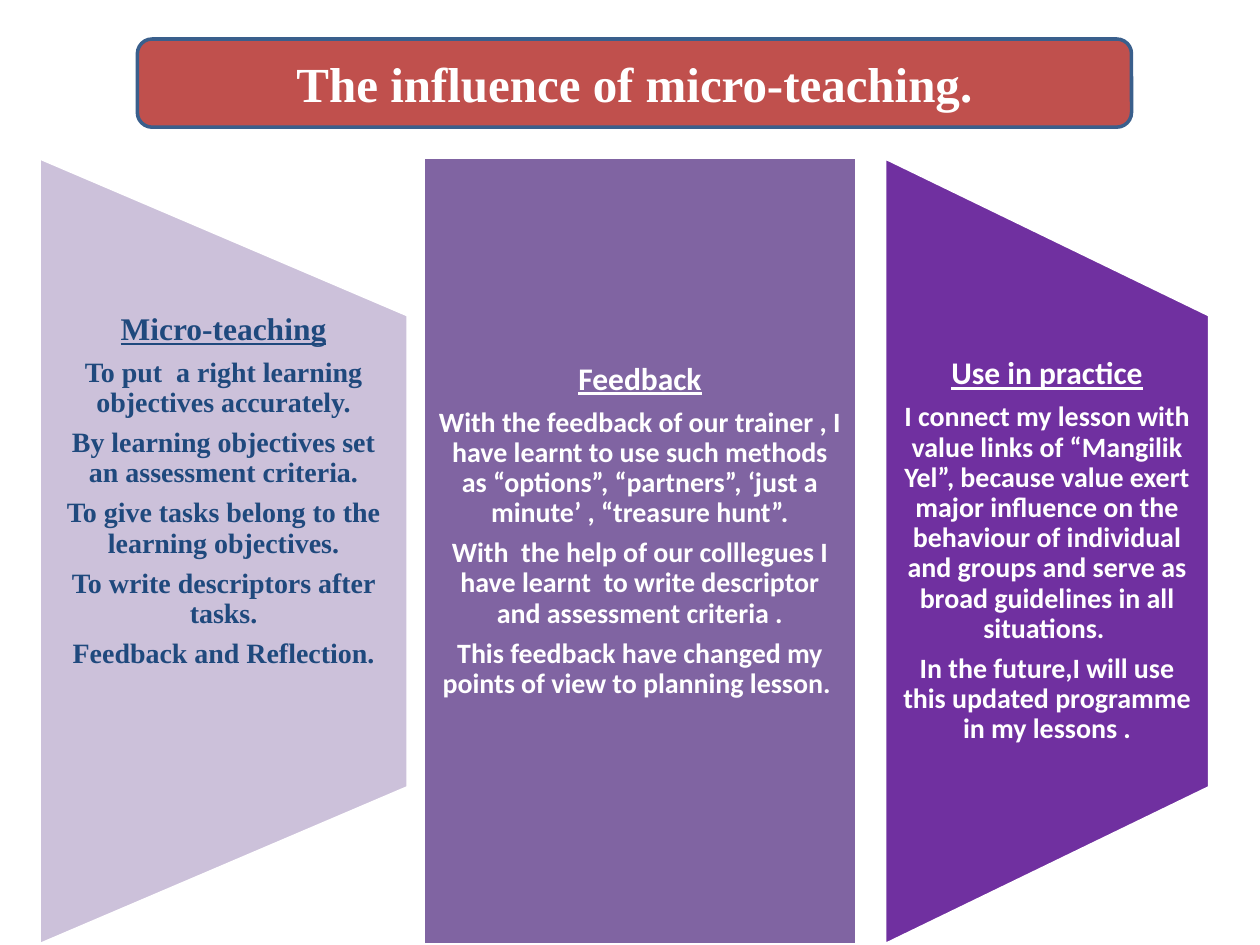
from dataclasses import dataclass

from pptx import Presentation
from pptx.dml.color import RGBColor
from pptx.enum import shapes, text
from pptx.util import Inches, Pt


@dataclass(frozen=True)
class Theme:
    white: str = "FFFFFF"
    navy: str = "1F497D"
    lilac: str = "CCC1DA"
    violet: str = "8064A2"
    purple: str = "7030A0"
    red: str = "C0504D"
    banner_line: str = "3A5F8C"
    serif: str = "Times New Roman"
    sans: str = "Calibri"
    title: int = 28
    heading: int = 18
    body: int = 16


THEME = Theme()
SHAPE = shapes.MSO_SHAPE
PANEL_TOP, PANEL_HEIGHT = 1.25, 6.25

# Each column: left, width, outline, fill, font, text colour,
# text top, text height, space under the text, heading and paragraphs
COLUMNS = [
    (0.31, 2.93, SHAPE.FLOWCHART_MANUAL_OPERATION, THEME.lilac,
     THEME.serif, THEME.navy, 2.5, 3.75, 0.95,
     ["Micro-teaching",
      "To put  a right learning objectives accurately.",
      "By learning objectives set an assessment criteria.",
      "To give tasks belong to the learning objectives.",
      "To write descriptors after tasks.",
      "Feedback and Reflection."]),
    (3.36, 3.44, SHAPE.FLOWCHART_PROCESS, THEME.violet,
     THEME.sans, THEME.white, 1.25, 6.25, 0.32,
     ["Feedback",
      "With the feedback of our trainer , I have learnt to use such methods "
      "as “options”, “partners”, ‘just a minute’ , “treasure hunt”.",
      "With  the help of our colllegues I have learnt  to write descriptor "
      "and assessment criteria .",
      "This feedback have changed my points of view to planning lesson. "]),
    (7.02, 2.58, SHAPE.FLOWCHART_MANUAL_OPERATION, THEME.purple,
     THEME.sans, THEME.white, 2.5, 3.75, 0,
     ["Use in practice",
      "I connect my lesson with value links of “Mangilik Yel”, because value "
      "exert major influence on the behaviour of individual and groups and "
      "serve as broad guidelines in all situations. ",
      "In the future,I will use this updated programme in my lessons ."]),
]


def rgb(value):
    return RGBColor.from_string(value)


def add_panel(s, kind, left, top, width, height, fill, line):
    sp = s.shapes.add_shape(kind, Inches(left), Inches(top),
                            Inches(width), Inches(height))
    sp.shadow.inherit = False
    sp.fill.solid()
    sp.fill.fore_color.rgb = rgb(fill)
    sp.line.color.rgb = rgb(line)
    sp.line.width = Pt(2)
    return sp


def format_paragraph(p, font, size, color, underline=False):
    p.alignment = text.PP_ALIGN.CENTER
    for r in p.runs:
        r.font.name = font
        r.font.size = Pt(size)
        r.font.bold = True
        r.font.underline = underline
        r.font.color.rgb = rgb(color)


def add_title(s):
    box = (1.09, 0.31, 7.89, 0.7)
    add_panel(s, SHAPE.ROUNDED_RECTANGLE, *box, THEME.red, THEME.banner_line)
    sp = s.shapes.title
    sp.left, sp.top, sp.width, sp.height = map(Inches, box)
    tf = sp.text_frame
    tf.text = "The influence of micro-teaching."
    tf.vertical_anchor = text.MSO_ANCHOR.MIDDLE
    format_paragraph(tf.paragraphs[0], THEME.serif, THEME.title, THEME.white)
    # Bring the title in front of its banner
    s.shapes._spTree.append(sp._element)


def add_column_text(s, left, top, width, height, below, font, color, lines):
    sp = s.shapes.add_textbox(Inches(left), Inches(top),
                              Inches(width), Inches(height))
    tf = sp.text_frame
    tf.word_wrap = True
    tf.vertical_anchor = text.MSO_ANCHOR.MIDDLE
    tf.margin_left = tf.margin_right = Inches(0.12)
    tf.margin_top, tf.margin_bottom = 0, Inches(below)
    tf.text = "\n".join(lines)
    for i, p in enumerate(tf.paragraphs):
        size = THEME.body if i else THEME.heading
        format_paragraph(p, font, size, color, underline=i == 0)
        p.line_spacing = 0.9
        p.space_after = Pt(0.35 * size)


def add_column(s, left, width, kind, fill, font, color,
               text_top, text_height, below, lines):
    # The panel lies on its side, so it is sized before its quarter turn
    middle_x = left + width / 2
    middle_y = PANEL_TOP + PANEL_HEIGHT / 2
    sp = add_panel(s, kind, middle_x - PANEL_HEIGHT / 2, middle_y - width / 2,
                   PANEL_HEIGHT, width, fill, THEME.white)
    sp.rotation = 270
    add_column_text(s, left, text_top, width, text_height, below,
                    font, color, lines)


def main():
    prs = Presentation()
    prs.slide_width, prs.slide_height = Inches(10), Inches(7.5)
    s = prs.slides.add_slide(prs.slide_layouts[5])

    # Three columns
    for column in COLUMNS:
        add_column(s, *column)

    # Title banner
    add_title(s)

    prs.save("out.pptx")


if __name__ == "__main__":
    main()
